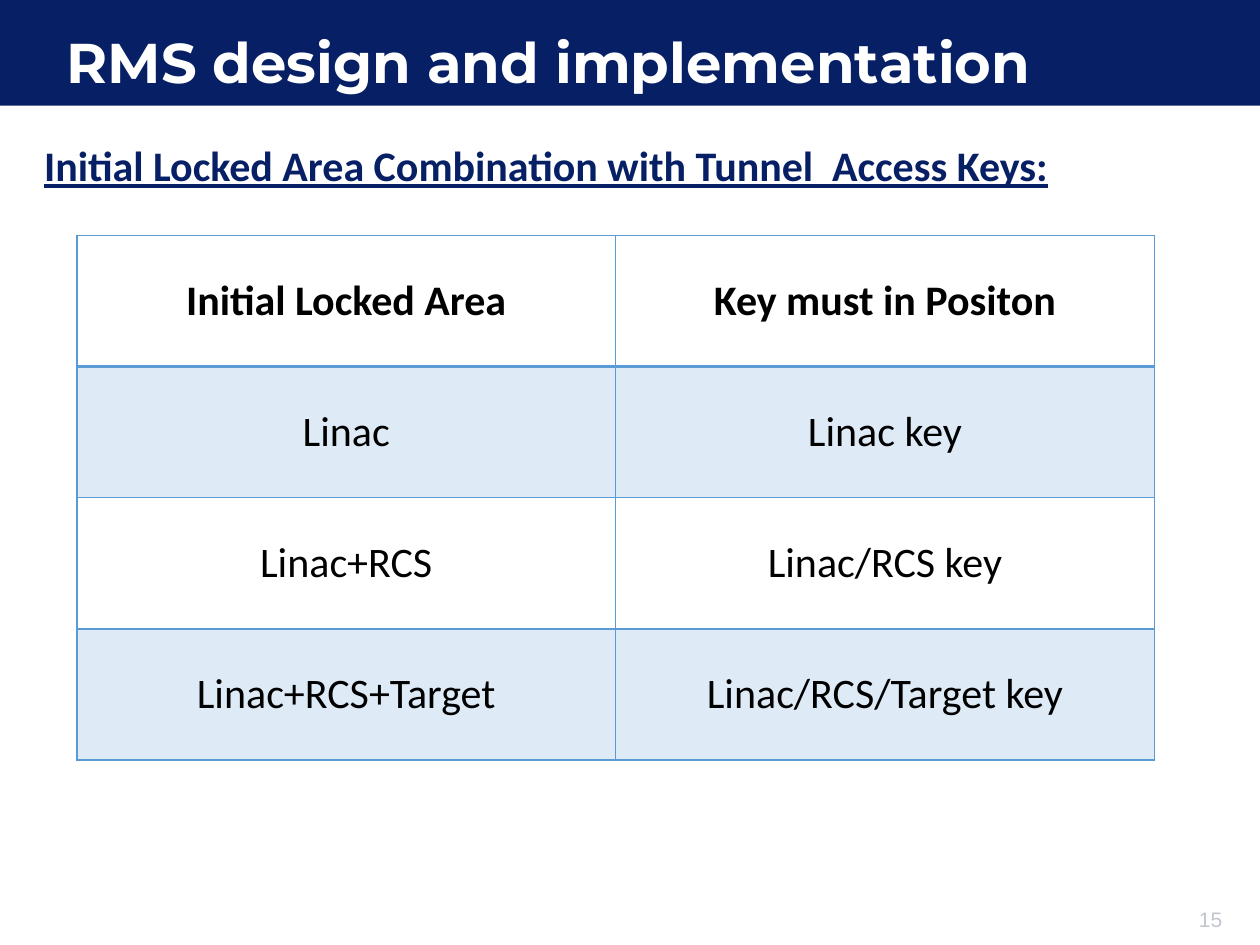
import pptx
import pptx.dml.color
import pptx.enum.shapes
import pptx.enum.text
import pptx.oxml.ns
import pptx.util
import lxml.etree

Cm = pptx.util.Cm
Pt = pptx.util.Pt
ALIGN = pptx.enum.text.PP_ALIGN
MIDDLE = pptx.enum.text.MSO_ANCHOR.MIDDLE
NAVY, BLUE, PALE = "071F65", "5B9BD5", "DEEBF7"
WHITE, BLACK, GREY = "FFFFFF", "000000", "C0C5CE"

ROWS = [
    ("Initial Locked Area", "Key must in Positon"),
    ("Linac", "Linac key"),
    ("Linac+RCS", "Linac/RCS key"),
    ("Linac+RCS+Target", "Linac/RCS/Target key"),
]


def color(code):
    return pptx.dml.color.RGBColor.from_string(code)


def write(frame, text, size, face, tint, bold=False, line=False, align=ALIGN.LEFT):
    para = frame.paragraphs[0]
    para.alignment = align
    run = para.add_run()
    run.text = text
    font = run.font
    font.size, font.name, font.bold, font.underline = Pt(size), face, bold, line
    font.color.rgb = color(tint)
    return para


def add_text(slide, box, *args, wrap=True, **style):
    frame = slide.shapes.add_textbox(*map(Cm, box)).text_frame
    frame.word_wrap = wrap
    return frame, write(frame, *args, **style)


def add_header(slide, box, title):
    left, top, width, height = box
    bar = slide.shapes.add_shape(pptx.enum.shapes.MSO_SHAPE.RECTANGLE, *map(Cm, box))
    bar.shadow.inherit = False
    bar.fill.solid()
    bar.fill.fore_color.rgb = color(NAVY)
    bar.line.fill.background()
    place = (left + 1.09, top + 0.51, width - 3.56, height - 0.51)
    frame, para = add_text(slide, place, title, 32, "Montserrat", WHITE, bold=True)
    frame.vertical_anchor = MIDDLE
    para.line_spacing = 0.9


def add_border(cell, side, width):
    """Draw one side (L, R, T or B) of a cell."""
    props = cell._tc.get_or_add_tcPr()
    qn = pptx.oxml.ns.qn
    edge = lxml.etree.SubElement(props, qn("a:ln" + side), w=str(Pt(width)))
    fill = lxml.etree.SubElement(edge, qn("a:solidFill"))
    lxml.etree.SubElement(fill, qn("a:srgbClr"), val=BLUE)


def add_grid(slide, box, rows):
    shape = slide.shapes.add_table(len(rows), len(rows[0]), *map(Cm, box))
    table = shape.table
    table.horz_banding = False
    for row, texts in enumerate(rows):
        table.rows[row].height = Cm(box[3] / len(rows))
        for col, text in enumerate(texts):
            cell = table.cell(row, col)
            cell.vertical_anchor = MIDDLE
            write(cell.text_frame, text, 24, "Calibri", BLACK,
                  bold=row == 0, align=ALIGN.CENTER)
            for side in "LRTB":
                thick = (row, side) in ((0, "B"), (1, "T"))
                add_border(cell, side, 2 if thick else 1)
            if row % 2:
                cell.fill.solid()
                cell.fill.fore_color.rgb = color(PALE)
            else:
                cell.fill.background()


def main():
    deck = pptx.Presentation()
    deck.slide_width, deck.slide_height = Cm(25.4), Cm(19.05)
    slide = deck.slides.add_slide(deck.slide_layouts[6])
    add_text(slide, (23.85, 18.16, 1.04, 0.76), "15", 12, "Arial", GREY,
             wrap=False, align=ALIGN.RIGHT)
    add_header(slide, (0, 0, 25.4, 2.13), "RMS design and implementation")
    add_text(slide, (0.64, 2.69, 21.64, 1.27),
             "Initial Locked Area Combination with Tunnel  Access Keys:",
             24, "Calibri", NAVY, bold=True, line=True)
    add_grid(slide, (1.55, 4.75, 21.72, 10.57), ROWS)
    deck.save("out.pptx")


if __name__ == "__main__":
    main()
